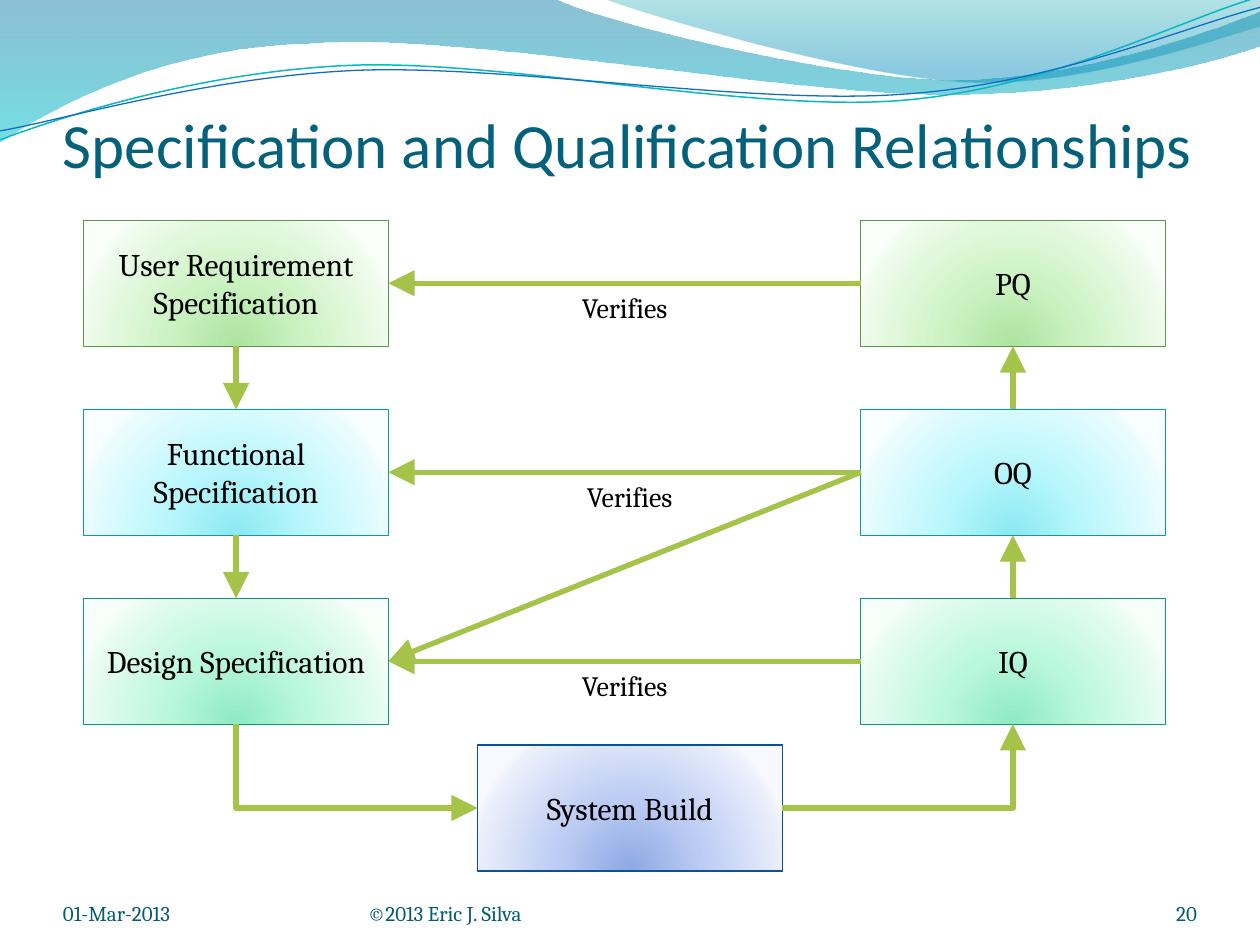
from collections import namedtuple
from dataclasses import dataclass
from math import cos, radians, sin

from lxml.etree import SubElement
from pptx import Presentation
from pptx.dml.color import RGBColor
from pptx.enum.shapes import MSO_CONNECTOR, MSO_SHAPE
from pptx.enum.text import MSO_ANCHOR, MSO_AUTO_SIZE, PP_ALIGN
from pptx.oxml.ns import qn
from pptx.util import Cm, Pt

Box = namedtuple("Box", "left top width height")  # centimetres
TOP, LEFT, BOTTOM, RIGHT = range(4)  # connection sites of a rectangle


@dataclass(frozen=True)
class Theme:
    heading: str = "Calibri"
    body: str = "Cambria"
    title_size: int = 36
    node_size: int = 18
    label_size: int = 16
    footer_size: int = 12
    title_color: str = "04617B"
    footer_color: str = "045D75"
    ink: str = "000000"
    arrow: str = "A5C249"
    teal_line: str = "0AB8BF"
    blue_line: str = "0F6FC6"
    # Wave stops: position, colour, opacity
    back_wave: tuple = ((0, "0074A1", 45), (100, "00C6CF", 55))
    front_wave: tuple = ((0, "00A1A9", 30), (80, "008BBF", 45))
    # Node palettes: outline, then glow from the centre outwards
    green: tuple = ("5B9747", "ACE49F", "CDF3C4", "EFFBED", "F9FFF8")
    cyan: tuple = ("069CA3", "8BE9F1", "B9F7FD", "EAFCFE", "F8FEFF")
    mint: tuple = ("0A9B74", "8DEAC2", "BAF8DB", "EAFCF3", "F7FFFB")
    blue: tuple = ("095295", "8DA8E3", "BBCBF3", "EAEFFB", "F7F9FF")


THEME = Theme()
GLOW_STOPS = (0, 43, 93, 100)


def gradient(shape, stops, radial=False):
    shape.fill.solid()
    solid = shape._element.spPr.find(qn("a:solidFill"))
    grad = solid.makeelement(qn("a:gradFill"), {"rotWithShape": "1"})
    stop_list = SubElement(grad, qn("a:gsLst"))
    for position, color, opacity in stops:
        stop = SubElement(stop_list, qn("a:gs"), pos=str(position * 1000))
        rgb = SubElement(stop, qn("a:srgbClr"), val=color)
        if opacity < 100:
            SubElement(rgb, qn("a:alpha"), val=str(opacity * 1000))
    if radial:
        circle = SubElement(grad, qn("a:path"), {"path": "circle"})
        SubElement(circle, qn("a:fillToRect"), l="50000", t="130000", r="50000", b="-30000")
    else:
        SubElement(grad, qn("a:lin"), ang="5400000", scaled="1")
    solid.getparent().replace(solid, grad)


def write(frame, text, size, color, font=THEME.body, align=PP_ALIGN.LEFT):
    paragraph = frame.paragraphs[0]
    paragraph.alignment = align
    run = paragraph.add_run()
    run.text = text
    run.font.name, run.font.size = font, Pt(size)
    run.font.color.rgb = RGBColor.from_string(color)


def bottom_text(slide, box, text, *style, **options):
    frame = slide.shapes.add_textbox(*map(Cm, box)).text_frame
    frame.word_wrap = True
    frame.vertical_anchor = MSO_ANCHOR.BOTTOM
    frame.margin_left = frame.margin_right = frame.margin_top = frame.margin_bottom = 0
    write(frame, text, *style, **options)
    return frame


def wave(slide, box, segments, stops=None, line=None, weight=0, tilt=0):
    """Draw segments of one point (straight) or three (cubic), given as seen on the slide."""
    right, bottom = box.left + box.width, box.top + box.height
    builder = slide.shapes.build_freeform(Cm(box.left), Cm(box.top))
    builder.add_line_segments([(Cm(right), Cm(bottom))], close=False)
    shape = builder.convert_to_shape()
    shape.shadow.inherit = False
    shape.rotation = tilt

    # Turn the points back by the tilt and write them as curves
    outline = next(shape._element.iter(qn("a:path")))
    for child in list(outline):
        outline.remove(child)
    turn = radians(-tilt)
    middle_x, middle_y = (box.left + right) / 2, (box.top + bottom) / 2
    for index, segment in enumerate(segments):
        tag = "a:moveTo" if index == 0 else "a:lnTo" if len(segment) == 1 else "a:cubicBezTo"
        command = SubElement(outline, qn(tag))
        for x, y in segment:
            across, down = x - middle_x, y - middle_y
            local_x = across * cos(turn) - down * sin(turn) + box.width / 2
            local_y = across * sin(turn) + down * cos(turn) + box.height / 2
            SubElement(command, qn("a:pt"), x=str(Cm(local_x)), y=str(Cm(local_y)))

    if stops:
        SubElement(outline, qn("a:close"))
        gradient(shape, stops)
        shape.line.fill.background()
    else:
        shape.fill.background()
        shape.line.color.rgb = RGBColor.from_string(line)
        shape.line.width = Pt(weight)


def wave_band(slide, box):
    def inside(left, top, width, height):
        return Box(box.left + left, box.top + top, width, height)

    # Filled waves
    wave(slide, inside(-0.03, -0.03, 25.45, 2.9), (
        ((0, 0),), ((11.18, -0.03),),
        ((12.09, 0.43), (16.87, 1.6), (19.25, 1.6)), ((21.67, 1.6), (24.33, 0.66), (25.4, 0.23)),
        ((25.43, 0.91),),
        ((24.97, 1.12), (22.1, 1.93), (18.95, 1.9)), ((15.8, 1.9), (9.7, 0.71), (6.53, 0.86)),
        ((3.28, 0.91), (1.17, 2.11), (-0.03, 2.87)), ((0, 0),)), THEME.back_wave)
    wave(slide, inside(12.17, -0.03, 13.23, 1.78), (
        ((12.17, -0.03),), ((12.93, 0.28), (17.32, 1.57), (19.53, 1.65)),
        ((21.74, 1.75), (24.41, 0.81), (25.4, 0.53)),
        ((25.4, 0),), ((12.17, -0.03),)), THEME.front_wave)

    # Thin tilted lines
    wave(slide, inside(-0.05, 0.56, 25.45, 1.8), (
        ((0, 2.82),), ((1.22, 2.36), (4.01, 1.45), (7.04, 1.32)),
        ((10.03, 1.19), (15.06, 2.26), (18.11, 2.03)),
        ((21.16, 1.8), (23.83, 0.38), (25.35, -0.05))), line=THEME.teal_line, weight=0.85, tilt=357.3)
    wave(slide, inside(-0.05, 0.76, 25.48, 1.47), (
        ((0, 2.64),), ((1.19, 2.44), (4.17, 1.55), (7.19, 1.42)),
        ((10.24, 1.3), (15.16, 2.13), (18.21, 1.9)),
        ((21.23, 1.7), (23.9, 0.53), (25.4, 0.15))), line=THEME.blue_line, weight=0.75, tilt=357.3)


def title(slide, box):
    frame = bottom_text(slide, box, "Specification and Qualification Relationships",
                        THEME.title_size, THEME.title_color, font=THEME.heading)
    frame.margin_top = Cm(0.13)


def footer(slide, box):
    for offset, width, text, align in (
            (0, 5.92, "01-Mar-2013", PP_ALIGN.LEFT),
            (6.14, 9.31, "©2013 Eric J. Silva", PP_ALIGN.LEFT),
            (20.74, 2.12, "20", PP_ALIGN.RIGHT)):
        place = Box(box.left + offset, box.top, width, box.height)
        bottom_text(slide, place, text, THEME.footer_size, THEME.footer_color, align=align)


def node(slide, box, text, palette):
    outline, *glow = palette
    shape = slide.shapes.add_shape(MSO_SHAPE.RECTANGLE, *map(Cm, box))
    shape.shadow.inherit = False
    gradient(shape, [(at, color, 100) for at, color in zip(GLOW_STOPS, glow)], radial=True)
    shape.line.color.rgb = RGBColor.from_string(outline)
    shape.line.width = Pt(0.75)
    shape.text_frame.word_wrap = True
    shape.text_frame.vertical_anchor = MSO_ANCHOR.MIDDLE
    write(shape.text_frame, text, THEME.node_size, THEME.ink, align=PP_ALIGN.CENTER)
    return shape


def arrow(slide, source, source_site, target, target_site, bent=False):
    kind = MSO_CONNECTOR.ELBOW if bent else MSO_CONNECTOR.STRAIGHT
    connector = slide.shapes.add_connector(kind, 0, 0, 0, 0)
    connector.begin_connect(source, source_site)
    connector.end_connect(target, target_site)
    properties = connector._element.spPr
    if bent:
        properties.find(qn("a:prstGeom")).set("prst", "bentConnector2")
    if bent and source_site == BOTTOM:
        # A single bend runs sideways first; turn it to run down first
        across, down = connector.width, connector.height
        connector.left += (across - down) // 2
        connector.top += (down - across) // 2
        connector.width, connector.height = down, across
        turn = properties.find(qn("a:xfrm"))
        turn.set("rot", "16200000")
        turn.set("flipH", "1")
    connector.line.color.rgb = RGBColor.from_string(THEME.arrow)
    connector.line.width = Pt(3)
    SubElement(properties.find(qn("a:ln")), qn("a:tailEnd"), type="triangle", w="lg", len="lg")
    SubElement(properties, qn("a:effectLst"))


def v_model(slide, box):
    width, height, pitch = 6.14, 2.54, 3.81
    right = box.left + box.width - width
    rows = [box.top + pitch * row for row in range(3)]
    palettes = (THEME.green, THEME.cyan, THEME.mint)

    # Specifications, system build and qualifications
    specs = [node(slide, Box(box.left, top, width, height), text, palette) for top, text, palette in zip(
        rows, ("User Requirement Specification", "Functional Specification", "Design Specification"), palettes)]
    build = node(slide, Box(box.left + 7.94, box.top + box.height - height, width, height),
                 "System Build", THEME.blue)
    tests = [node(slide, Box(right, top, width, height), text, palette)
             for top, text, palette in zip(rows, ("PQ", "OQ", "IQ"), palettes)]

    # Down the left, through the build and up the right
    for upper, lower in zip(specs, specs[1:]):
        arrow(slide, upper, BOTTOM, lower, TOP)
    arrow(slide, specs[-1], BOTTOM, build, LEFT, bent=True)
    arrow(slide, build, RIGHT, tests[-1], BOTTOM, bent=True)
    for lower, upper in ((2, 1), (1, 0)):
        arrow(slide, tests[lower], TOP, tests[upper], BOTTOM)

    # Verification links; OQ also verifies the design
    for test, spec in ((0, 0), (1, 1), (1, 2), (2, 2)):
        arrow(slide, tests[test], LEFT, specs[spec], RIGHT)
    for top, offset in zip(rows, (9.79, 9.89, 9.79)):
        label = Box(box.left + offset, top + height / 2 + 0.02, 2.24, 0.94)
        frame = slide.shapes.add_textbox(*map(Cm, label)).text_frame
        frame.word_wrap = False
        frame.auto_size = MSO_AUTO_SIZE.SHAPE_TO_FIT_TEXT
        write(frame, "Verifies", THEME.label_size, THEME.ink)


def main():
    deck = Presentation()
    deck.slide_width, deck.slide_height = Cm(25.4), Cm(19.05)
    slide = deck.slides.add_slide(deck.slide_layouts[6])
    wave_band(slide, Box(0, 0, 25.4, 2.9))
    title(slide, Box(1.27, 1.9, 23.06, 1.75))
    footer(slide, Box(1.27, 17.65, 22.86, 1.02))
    v_model(slide, Box(1.69, 4.44, 21.8, 13.12))
    deck.save("out.pptx")


if __name__ == "__main__":
    main()
